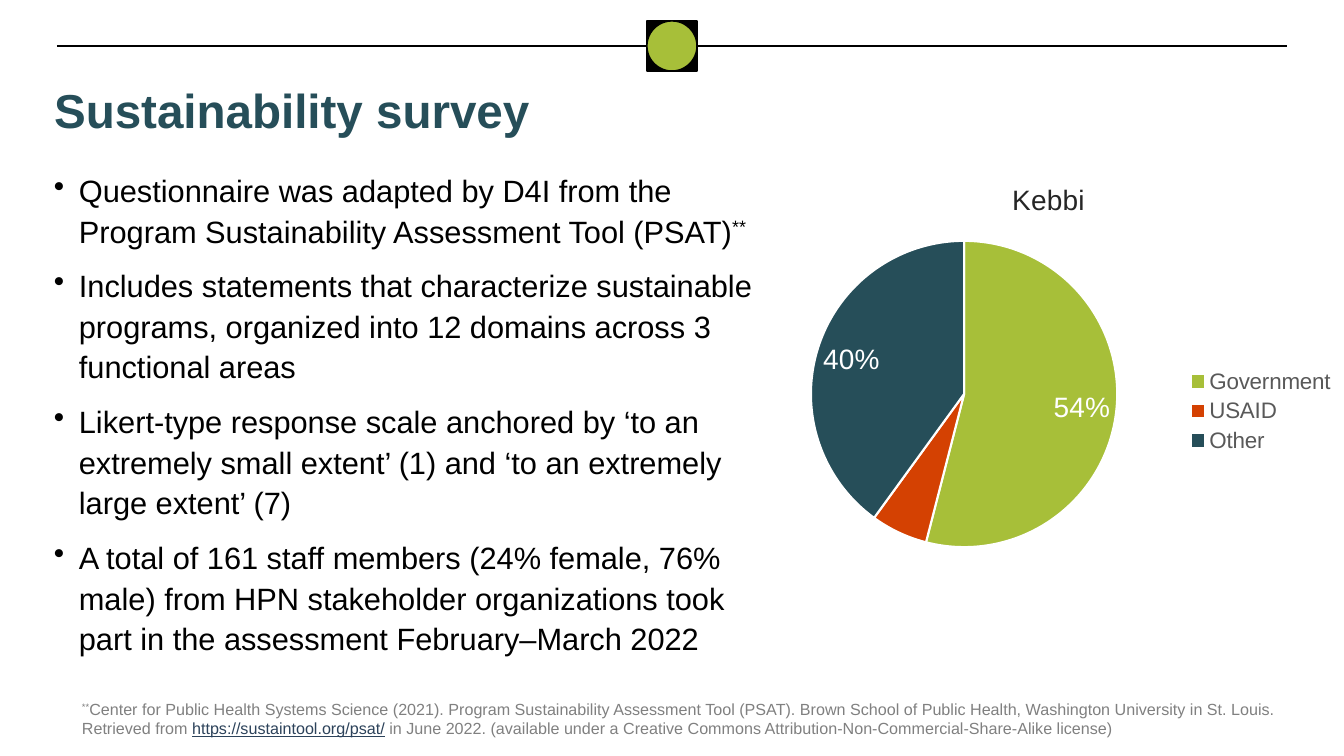
from dataclasses import dataclass

from lxml import etree
from pptx import Presentation
from pptx.chart.data import CategoryChartData
from pptx.dml.color import RGBColor
from pptx.enum.chart import XL_CHART_TYPE, XL_LABEL_POSITION, XL_LEGEND_POSITION
from pptx.enum.shapes import MSO_CONNECTOR, MSO_SHAPE
from pptx.enum.text import MSO_ANCHOR, PP_ALIGN
from pptx.oxml import parse_xml
from pptx.oxml.ns import nsdecls, qn
from pptx.util import Emu, Pt

PIE = XL_CHART_TYPE.PIE
BEST_FIT = XL_LABEL_POSITION.BEST_FIT
LEGEND_RIGHT = XL_LEGEND_POSITION.RIGHT
STRAIGHT = MSO_CONNECTOR.STRAIGHT
RECTANGLE = MSO_SHAPE.RECTANGLE
OVAL = MSO_SHAPE.OVAL
MIDDLE = MSO_ANCHOR.MIDDLE
LEFT = PP_ALIGN.LEFT

PX_PER_INCH = 100.8
TITLE_ONLY = 5


@dataclass(frozen=True)
class Theme:
    font: str = "Arial"
    black: str = "000000"
    white: str = "FFFFFF"
    green: str = "A7BF39"
    orange: str = "D44102"
    teal: str = "264E59"
    footnote_gray: str = "808080"
    legend_gray: str = "595959"
    chart_title_gray: str = "262626"
    link_blue: str = "2C425A"
    title_size: float = 34
    body_size: float = 22
    chart_size: float = 20
    legend_size: float = 16
    footnote_size: float = 11.5


THEME = Theme()

FINDINGS = [
    ["Questionnaire was adapted by D4I from the Program Sustainability Assessment Tool (PSAT)", "**"],
    ["Includes statements that characterize sustainable programs, organized into 12 domains "
     "across 3 functional areas"],
    ["Likert-type response scale anchored by ‘to an extremely small extent’ (1) and "
     "‘to an extremely large extent’ (7)"],
    ["A total of 161 staff members (24% female, 76% male) from HPN stakeholder organizations "
     "took part in the assessment February–March 2022"],
]
CITATION = [
    "**",
    "Center for Public Health Systems Science (2021). Program Sustainability Assessment Tool (PSAT). "
    "Brown School of Public Health, Washington University in St. Louis. Retrieved from ",
    "https://sustaintool.org/psat/",
    " in June 2022. (available under a Creative Commons Attribution-Non-Commercial-Share-Alike license)",
]
RESPONDENTS = [
    ("Government", 54, THEME.green),
    ("USAID", 6, THEME.orange),
    ("Other", 40, THEME.teal),
]


def px(length):
    return Emu(round(length * 914400 / PX_PER_INCH))


def box(*lengths):
    return [px(length) for length in lengths]


def color(hex_code):
    return RGBColor.from_string(hex_code)


def style_font(font, size, hex_code, bold=False):
    font.name = THEME.font
    font.size = Pt(size)
    font.bold = bold
    font.color.rgb = color(hex_code)


def add_runs(paragraph, texts):
    for text in texts:
        run = paragraph.add_run()
        run.text = text
        if text == "**":
            run.font._element.set("baseline", "30000")
        elif text.startswith("https:"):
            run.font.underline = True
            run.font.color.rgb = color(THEME.link_blue)


def add_rule(slide):
    rule = slide.shapes.add_connector(STRAIGHT, *box(57, 46, 1287, 46))
    rule.line.color.rgb = color(THEME.black)
    rule.line.width = Pt(0.75)
    etree.SubElement(rule._element.spPr, qn("a:effectLst"))


def add_emblem_part(slide, preset, fill):
    part = slide.shapes.add_shape(preset, *box(647, 21, 50, 50))
    part.shadow.inherit = False
    part.fill.solid()
    part.fill.fore_color.rgb = color(fill)
    part.line.color.rgb = color(THEME.black)
    part.line.width = Pt(1)


def set_title(slide, text):
    title = slide.shapes.title
    title.left, title.top, title.width, title.height = box(44, 74, 1004, 70)
    title.text_frame.text = text
    title.text_frame.vertical_anchor = MIDDLE
    heading = title.text_frame.paragraphs[0]
    heading.alignment = LEFT
    style_font(heading.font, THEME.title_size, THEME.teal, bold=True)


def add_text_frame(slide, *lengths):
    frame = slide.shapes.add_textbox(*box(*lengths)).text_frame
    frame.word_wrap = True
    return frame


def add_findings(slide):
    frame = add_text_frame(slide, 44, 163, 746, 507)
    for index, texts in enumerate(FINDINGS):
        finding = frame.add_paragraph() if index else frame.paragraphs[0]
        finding.line_spacing = 1.1
        finding.space_after = Pt(10)
        style_font(finding.font, THEME.body_size, THEME.black)
        properties = finding._p.get_or_add_pPr()
        properties.set("marL", str(px(25)))
        properties.set("indent", str(px(-25)))
        bullet = parse_xml(f'<a:buChar {nsdecls("a")} char="•"/>')
        properties.insert_element_before(bullet, "a:tabLst", "a:defRPr", "a:extLst")
        add_runs(finding, texts)


def add_footnote(slide):
    citation = add_text_frame(slide, 72, 694, 1239, 50).paragraphs[0]
    style_font(citation.font, THEME.footnote_size, THEME.footnote_gray)
    add_runs(citation, CITATION)


def place_in_chart(element, x, y, w, h, inner=False):
    for previous in element.findall(qn("c:layout")):
        element.remove(previous)
    target = '<c:layoutTarget val="inner"/>' if inner else ""
    layout = parse_xml(
        f'<c:layout {nsdecls("c")}><c:manualLayout>{target}'
        '<c:xMode val="edge"/><c:yMode val="edge"/>'
        f'<c:x val="{x}"/><c:y val="{y}"/><c:w val="{w}"/><c:h val="{h}"/>'
        "</c:manualLayout></c:layout>"
    )
    element.insert(0 if inner else 1, layout)


def add_respondent_pie(slide):
    shares = CategoryChartData(number_format="General")
    shares.categories = [name for name, _, _ in RESPONDENTS]
    shares.add_series("Series 1", [share for _, share, _ in RESPONDENTS])
    chart = slide.shapes.add_chart(PIE, *box(736, 163, 625, 428), shares).chart
    chart.font.name = THEME.font

    chart.has_title = True
    state = chart.chart_title.text_frame
    state.text = "Kebbi"
    style_font(state.paragraphs[0].font, THEME.chart_size, THEME.chart_title_gray)

    chart.has_legend = True
    chart.legend.position = LEGEND_RIGHT
    chart.legend.include_in_layout = False
    style_font(chart.legend.font, THEME.legend_size, THEME.legend_gray)
    place_in_chart(chart.legend._element, 0.71, 0.47, 0.26, 0.22)
    place_in_chart(chart._chartSpace.chart.plotArea, 0.12, 0.18, 0.49, 0.72, inner=True)

    plot = chart.plots[0]
    plot.vary_by_categories = True
    for index, (_, _, fill) in enumerate(RESPONDENTS):
        slice_format = plot.series[0].points[index].format
        slice_format.fill.solid()
        slice_format.fill.fore_color.rgb = color(fill)
        slice_format.line.color.rgb = color(THEME.white)
        slice_format.line.width = Pt(1.5)

    labels = plot.series[0].data_labels
    labels.show_percentage = True
    labels.show_value = False
    labels.number_format = "0%"
    labels.number_format_is_linked = False
    labels.position = BEST_FIT
    style_font(labels.font, THEME.chart_size, THEME.white)


def main():
    deck = Presentation()
    deck.slide_width, deck.slide_height = box(1344, 756)
    slide = deck.slides.add_slide(deck.slide_layouts[TITLE_ONLY])
    add_rule(slide)
    add_emblem_part(slide, RECTANGLE, THEME.black)
    add_emblem_part(slide, OVAL, THEME.green)
    set_title(slide, "Sustainability survey")
    add_findings(slide)
    add_respondent_pie(slide)
    add_footnote(slide)
    deck.save("out.pptx")


if __name__ == "__main__":
    main()
